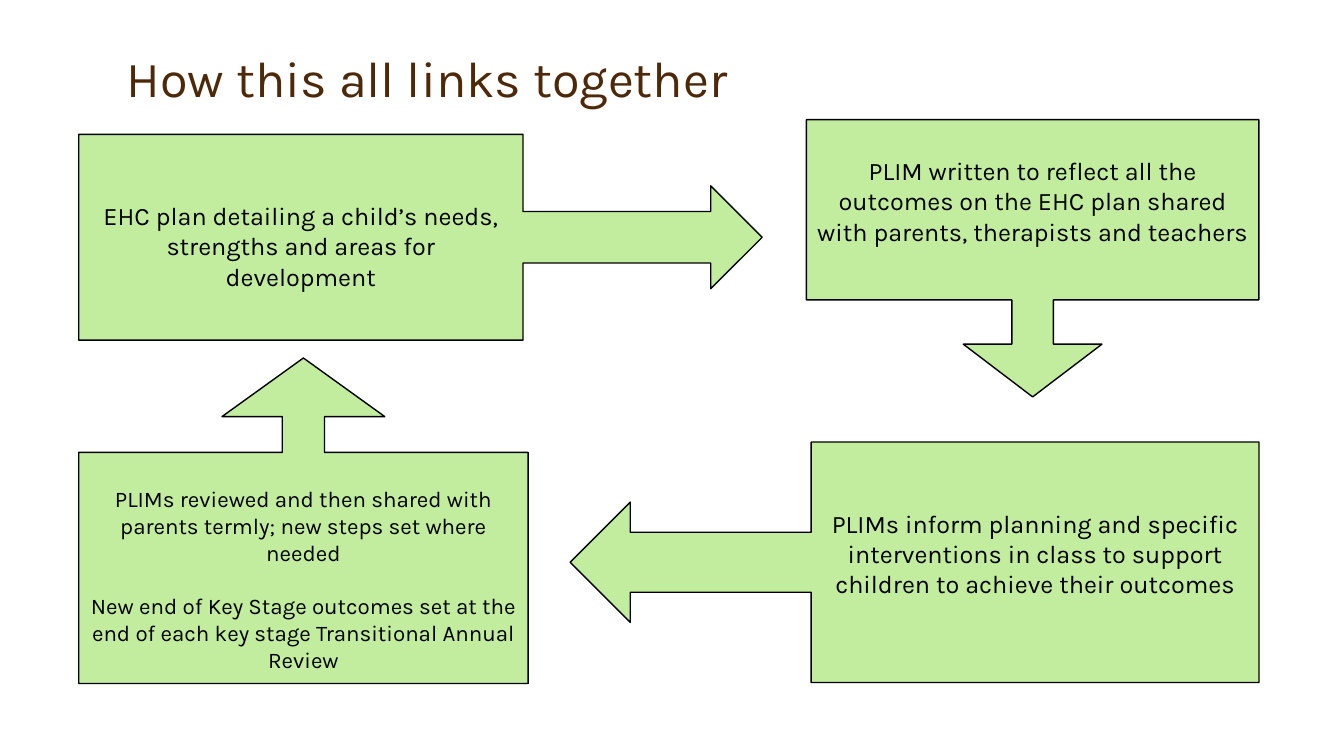
from pptx import Presentation
from pptx.dml.color import RGBColor
from pptx.enum.shapes import MSO_SHAPE as Shape
from pptx.enum.text import MSO_ANCHOR as Anchor, MSO_AUTO_SIZE as AutoSize, PP_ALIGN as Align
from pptx.util import Pt

PX = 9525
FONT = "Karla"
BROWN = RGBColor(0x4D, 0x29, 0x0A)
BLACK = RGBColor(0, 0, 0)
GREEN = RGBColor(0xC3, 0xED, 0x9E)

# preset, box (px), adjustments, text size, top inset (px), paragraphs
CALLOUTS = [
    (Shape.RIGHT_ARROW_CALLOUT, (75, 128, 651, 196), (0.25, 0.25, 0.25, 0.65), 18, 63,
     ["EHC plan detailing a child’s needs, strengths and areas for development"]),
    (Shape.DOWN_ARROW_CALLOUT, (768, 114, 431, 264), (0.15, 0.25, 0.19, 0.65), 18, 34,
     ["PLIM written to reflect all the outcomes on the EHC plan shared with parents, "
      "therapists and teachers"]),
    (Shape.LEFT_ARROW_CALLOUT, (543, 421, 656, 229), (0.25, 0.25, 0.25, 0.65), 18, 63,
     ["PLIMs inform planning and specific interventions in class to support children "
      "to achieve their outcomes"]),
    (Shape.UP_ARROW_CALLOUT, (75, 341, 428, 310), (0.13, 0.25, 0.18, 0.71), 16, 31,
     ["PLIMs reviewed and then shared with parents termly; new steps set where needed",
      "New end of Key Stage outcomes set at the end of each key stage Transitional "
      "Annual Review"]),
]


def place(shape, box):
    shape.left, shape.top, shape.width, shape.height = (length * PX for length in box)


def style_font(paragraph, size, color):
    font = paragraph.font
    font.name, font.size, font.color.rgb = FONT, Pt(size), color


def set_title(slide, box, text):
    title = slide.shapes.title
    place(title, box)
    frame = title.text_frame
    frame.text = text
    frame.word_wrap = True
    frame.auto_size = AutoSize.NONE
    frame.vertical_anchor = Anchor.BOTTOM
    paragraph = frame.paragraphs[0]
    paragraph.alignment = Align.LEFT
    paragraph.line_spacing = 0.9
    style_font(paragraph, 36, BROWN)


def add_callout(slide, preset, box, adjustments, size, top_inset, texts):
    callout = slide.shapes.add_shape(preset, *(length * PX for length in box))
    for index, value in enumerate(adjustments):
        callout.adjustments[index] = value
    callout.shadow.inherit = False
    callout.fill.solid()
    callout.fill.fore_color.rgb = GREEN
    callout.line.color.rgb = BLACK
    callout.line.width = Pt(1)
    frame = callout.text_frame
    frame.word_wrap = True
    frame.vertical_anchor = Anchor.TOP
    frame.margin_top = top_inset * PX
    frame.text = "\n".join(texts)
    for index, paragraph in enumerate(frame.paragraphs):
        paragraph.alignment = Align.CENTER
        if index:
            paragraph.space_before = Pt(1.2 * size)
        style_font(paragraph, size, BLACK)


def main():
    presentation = Presentation()
    presentation.slide_width, presentation.slide_height = 1280 * PX, 720 * PX
    slide = presentation.slides.add_slide(presentation.slide_layouts[5])
    set_title(slide, (111, 32, 1056, 76), "How this all links together")
    for callout in CALLOUTS:
        add_callout(slide, *callout)
    presentation.save("out.pptx")


if __name__ == "__main__":
    main()
